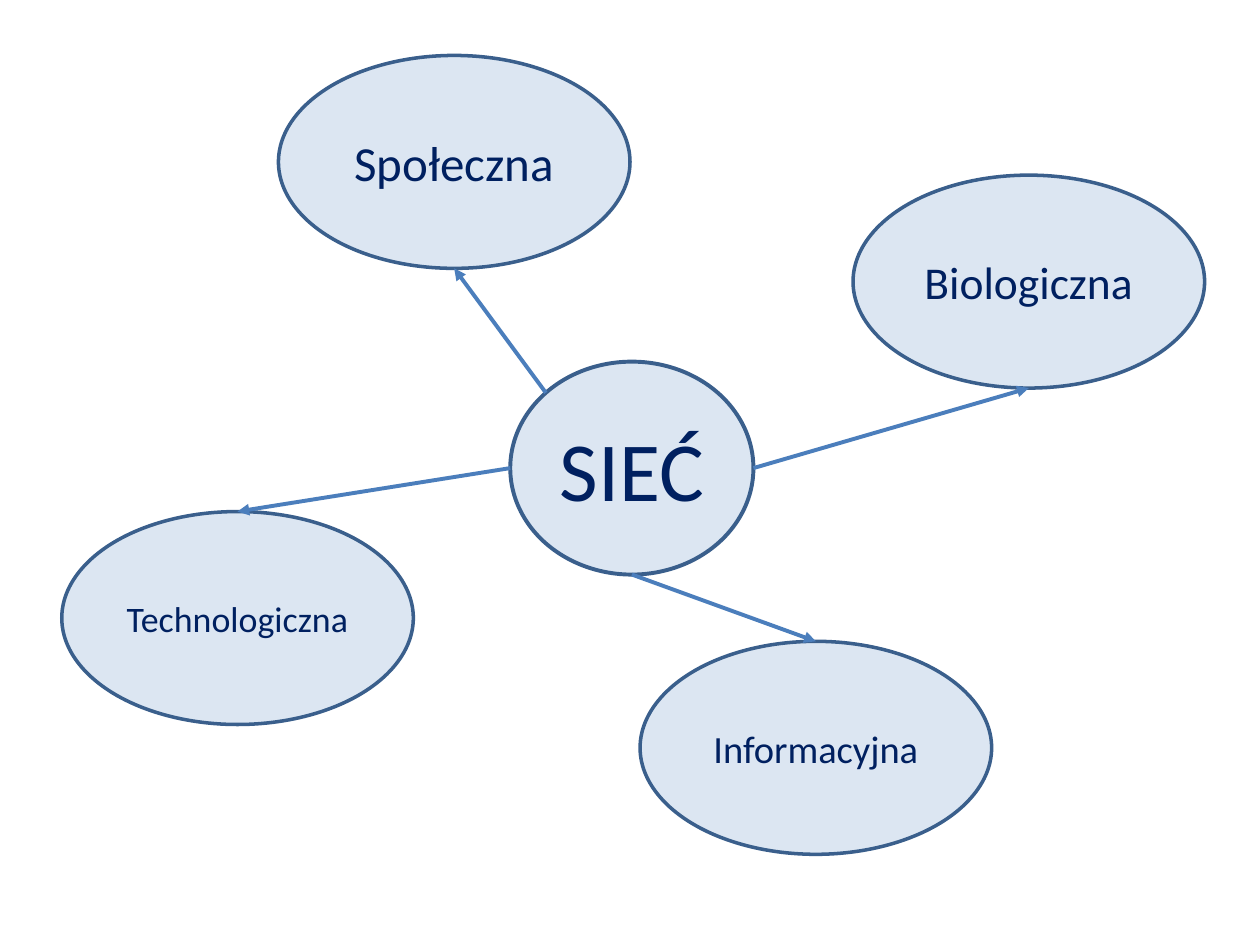
"""Build a mind map of four kinds of network around a central hub."""
from dataclasses import dataclass

from lxml import etree
from pptx import Presentation
from pptx.dml.color import RGBColor
from pptx.enum.shapes import MSO_CONNECTOR, MSO_SHAPE
from pptx.enum.text import MSO_ANCHOR, PP_ALIGN
from pptx.oxml.ns import qn
from pptx.util import Inches, Pt

ELLIPSE = MSO_SHAPE.OVAL
STRAIGHT = MSO_CONNECTOR.STRAIGHT
MIDDLE = MSO_ANCHOR.MIDDLE
CENTER = PP_ALIGN.CENTER
PALE_BLUE = RGBColor(0xDC, 0xE6, 0xF2)
RIM_BLUE = RGBColor(0x3A, 0x5F, 0x8C)
ARROW_BLUE = RGBColor(0x4B, 0x7E, 0xBC)
NAVY = RGBColor(0x00, 0x20, 0x60)
BLANK_LAYOUT = 6
BUBBLE_HEIGHT = 1.69
DIAGONAL = 0.5 ** 0.5


@dataclass(frozen=True)
class Bubble:
    label: str
    left: float
    top: float
    size: float
    width: float = 2.79
    rim: float = 2

    def point(self, across: float, down: float) -> tuple[float, float]:
        """Return a point at offsets of -1 to 1 from the centre."""
        return (self.left + self.width * (1 + across) / 2,
                self.top + BUBBLE_HEIGHT * (1 + down) / 2)


@dataclass(frozen=True)
class Branch:
    bubble: Bubble
    hub_side: tuple[float, float]
    bubble_side: tuple[float, float]


TOP, LEFT, BOTTOM, RIGHT = (0, -1), (-1, 0), (0, 1), (1, 0)
TOP_LEFT = (-DIAGONAL, -DIAGONAL)
HUB = Bubble("SIEĆ", 4.05, 2.87, 48, width=1.93, rim=2.25)
BRANCHES = [
    Branch(Bubble("Społeczna", 2.21, 0.44, 28), TOP_LEFT, BOTTOM),
    Branch(Bubble("Biologiczna", 6.77, 1.39, 26), RIGHT, BOTTOM),
    Branch(Bubble("Technologiczna", 0.49, 4.06, 20.5), LEFT, TOP),
    Branch(Bubble("Informacyjna", 5.08, 5.09, 22), BOTTOM, TOP),
]


def outline_text(run) -> None:
    """Give the letters a thin navy outline."""
    outline = etree.Element(qn("a:ln"), w=str(Pt(0.75)))
    fill = etree.SubElement(outline, qn("a:solidFill"))
    etree.SubElement(fill, qn("a:srgbClr"), val=str(NAVY))
    run.font._element.insert(0, outline)


def draw_bubble(slide, bubble: Bubble) -> None:
    """Draw one labelled ellipse."""
    ellipse = slide.shapes.add_shape(
        ELLIPSE, Inches(bubble.left), Inches(bubble.top),
        Inches(bubble.width), Inches(BUBBLE_HEIGHT))
    ellipse.shadow.inherit = False
    ellipse.fill.solid()
    ellipse.fill.fore_color.rgb = PALE_BLUE
    ellipse.line.color.rgb = RIM_BLUE
    ellipse.line.width = Pt(bubble.rim)
    frame = ellipse.text_frame
    for name, value in {"word_wrap": False, "vertical_anchor": MIDDLE}.items():
        setattr(frame, name, value)
    paragraph = frame.paragraphs[0]
    paragraph.alignment = CENTER
    label = paragraph.add_run()
    label.text = bubble.label
    for name, value in {"name": "Calibri", "size": Pt(bubble.size)}.items():
        setattr(label.font, name, value)
    label.font.color.rgb = NAVY
    outline_text(label)


def draw_arrow(slide, branch: Branch) -> None:
    """Draw the arrow from the hub to a branch bubble."""
    start = HUB.point(*branch.hub_side)
    end = branch.bubble.point(*branch.bubble_side)
    arrow = slide.shapes.add_connector(
        STRAIGHT, *(Inches(length) for length in start + end))
    arrow.line.color.rgb = ARROW_BLUE
    arrow.line.width = Pt(2.25)
    etree.SubElement(arrow.line._get_or_add_ln(), qn("a:tailEnd"), type="triangle")
    etree.SubElement(arrow._element.spPr, qn("a:effectLst"))


def main() -> None:
    """Build and save the slide."""
    presentation = Presentation()
    presentation.slide_width = Inches(10)
    presentation.slide_height = Inches(7.5)
    slide = presentation.slides.add_slide(presentation.slide_layouts[BLANK_LAYOUT])
    for bubble in [HUB] + [branch.bubble for branch in BRANCHES]:
        draw_bubble(slide, bubble)
    for branch in BRANCHES:
        draw_arrow(slide, branch)
    presentation.save("out.pptx")


if __name__ == "__main__":
    main()
